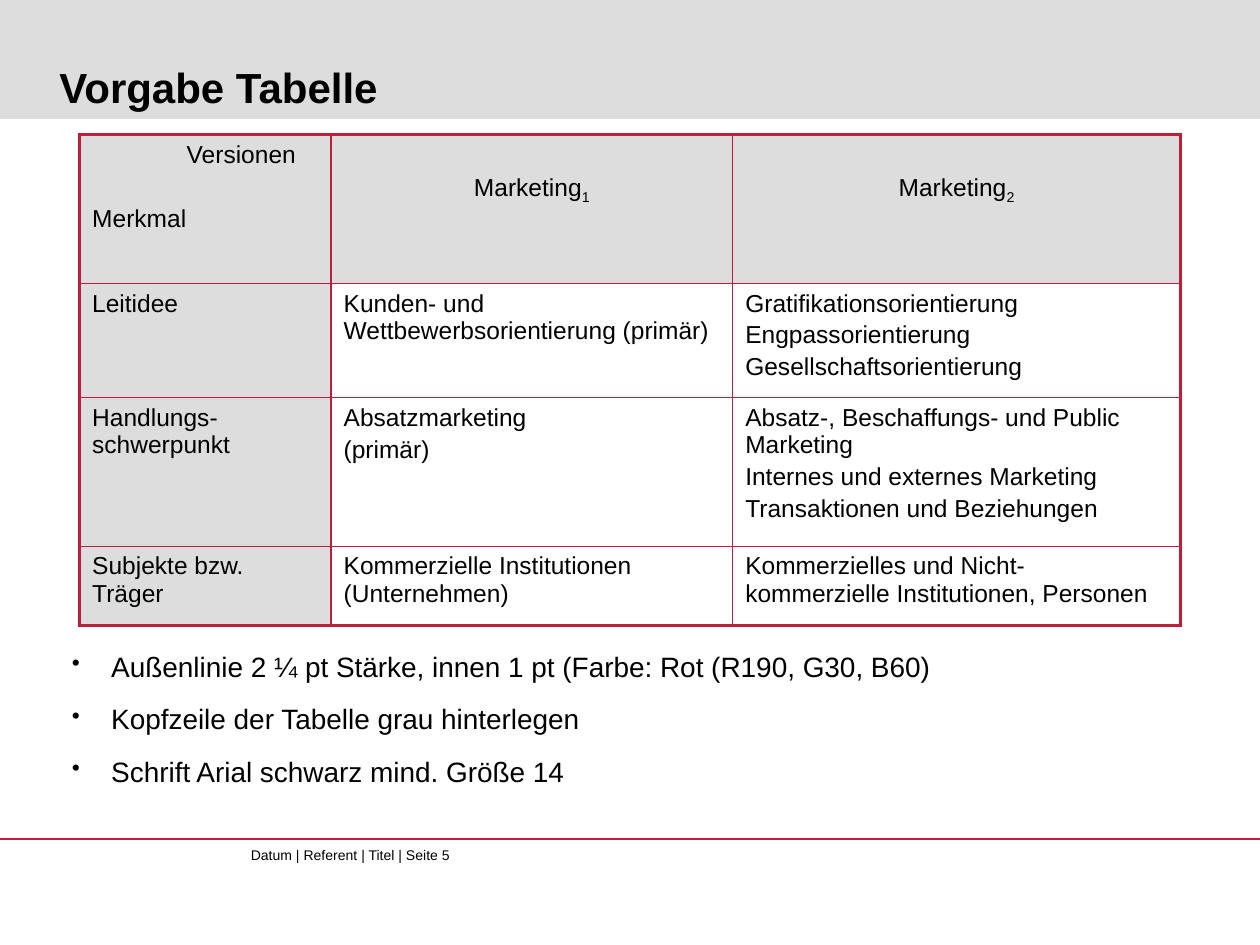
import pptx
import pptx.util
import pptx.dml.color
import pptx.enum.shapes
import pptx.enum.text
import pptx.oxml
import pptx.oxml.ns
from lxml import etree

Pt = pptx.util.Pt
ALIGN = pptx.enum.text.PP_ALIGN
COLORS = {"text": "000000", "grey": "DDDDDD", "red": "BE1E3C"}


def rgb(name):
    return pptx.dml.color.RGBColor.from_string(COLORS[name])


def write(frame, lines, size=14, bold=False, align=ALIGN.LEFT, gap=0,
          spacing=None, bullet=None, margins=None, anchor=None):
    """Fill a text frame; an underscore in a line starts a subscript."""
    frame.word_wrap = True
    if margins is not None:
        frame.margin_left = frame.margin_right = Pt(margins)
        frame.margin_top = frame.margin_bottom = Pt(margins)
    if anchor is not None:
        frame.vertical_anchor = anchor
    for i, line in enumerate(lines):
        paragraph = frame.add_paragraph() if i else frame.paragraphs[0]
        if bullet:
            pPr = paragraph._p.get_or_add_pPr()
            pPr.set("marL", str(Pt(22.5)))
            pPr.set("indent", str(Pt(-22.5)))
            etree.SubElement(pPr, pptx.oxml.ns.qn("a:buSzPct")).set("val", "85000")
            etree.SubElement(pPr, pptx.oxml.ns.qn("a:buChar")).set("char", bullet)
        paragraph.alignment = align
        if spacing:
            paragraph.line_spacing = spacing
        if i and gap:
            paragraph.space_before = Pt(gap)
        for j, part in enumerate(line.split("_")):
            run = paragraph.add_run()
            run.text = part
            run.font.name = "Arial"
            run.font.size = Pt(size)
            run.font.bold = bold
            run.font.color.rgb = rgb("text")
            if j:
                run._r.get_or_add_rPr().set("baseline", "-25000")


prs = pptx.Presentation()
prs.slide_width, prs.slide_height = Pt(720), Pt(540)
slide = prs.slides.add_slide(prs.slide_layouts[5])
shapes = slide.shapes

# Header band, behind the title
band = shapes.add_shape(pptx.enum.shapes.MSO_SHAPE.RECTANGLE, 0, 0, Pt(720), Pt(68))
band.shadow.inherit = False
band.fill.solid()
band.fill.fore_color.rgb = rgb("grey")
band.line.fill.background()
shapes._spTree.insert(2, band._element)

title = shapes.title
title.left, title.top, title.width, title.height = Pt(34), Pt(8.5), Pt(659.5), Pt(55.5)
write(title.text_frame, ["Vorgabe Tabelle"], size=24, bold=True, margins=0,
      anchor=pptx.enum.text.MSO_ANCHOR.BOTTOM)

# Footer
rule = shapes.add_connector(pptx.enum.shapes.MSO_CONNECTOR.STRAIGHT,
                            0, Pt(479.5), Pt(720), Pt(479.5))
rule.line.color.rgb = rgb("red")
rule.line.width = Pt(0.75)
etree.SubElement(rule._element.spPr, pptx.oxml.ns.qn("a:effectLst"))
footer = shapes.add_textbox(Pt(143.3), Pt(484), Pt(392.5), Pt(16.5))
write(footer.text_frame, ["Datum | Referent | Titel | Seite 5"], size=8, margins=0)

# Comparison table: one list of paragraphs per cell
rows = [
    [["Versionen", "Merkmal"], ["Marketing_1"], ["Marketing_2"]],
    [["Leitidee"],
     ["Kunden- und Wettbewerbsorientierung (primär)"],
     ["Gratifikationsorientierung", "Engpassorientierung", "Gesellschaftsorientierung"]],
    [["Handlungs- schwerpunkt"],
     ["Absatzmarketing", "(primär)"],
     ["Absatz-, Beschaffungs- und Public Marketing",
      "Internes und externes Marketing", "Transaktionen und Beziehungen"]],
    [["Subjekte bzw. Träger"],
     ["Kommerzielle Institutionen (Unternehmen)"],
     ["Kommerzielles und Nicht- kommerzielle Institutionen, Personen"]],
]
widths = [143.7, 229.5, 255.8]
heights = [85, 65.3, 85, 45.3]
table = shapes.add_table(len(rows), len(widths), Pt(45.5), Pt(77),
                         Pt(sum(widths)), Pt(sum(heights))).table
table.first_row = table.horz_banding = False
for column, width in zip(table.columns, widths):
    column.width = Pt(width)
for row, height in zip(table.rows, heights):
    row.height = Pt(height)

last_row, last_column = len(rows) - 1, len(widths) - 1
for r, row in enumerate(rows):
    for c, lines in enumerate(row):
        cell = table.cell(r, c)
        if r == 0 or c == 0:
            cell.fill.solid()
            cell.fill.fore_color.rgb = rgb("grey")
        else:
            cell.fill.background()
        heading = r == 0 and c > 0
        write(cell.text_frame, lines, gap=21 if r == 0 else 2.5,
              align=ALIGN.CENTER if heading else ALIGN.LEFT)
        if heading:
            cell.margin_top = Pt(22.5)
        # Thick outside, thin inside
        outer = {"lnL": c == 0, "lnR": c == last_column,
                 "lnT": r == 0, "lnB": r == last_row}
        for position, (side, thick) in enumerate(outer.items()):
            cell._tc.get_or_add_tcPr().insert(position, pptx.oxml.parse_xml(
                f'<a:{side} {pptx.oxml.ns.nsdecls("a")} w="{Pt(2.25 if thick else 1)}">'
                f'<a:solidFill><a:srgbClr val="{COLORS["red"]}"/></a:solidFill></a:{side}>'))
versions = table.cell(0, 0).text_frame.paragraphs[0]
versions._p.get_or_add_pPr().set("marL", str(Pt(54)))

# Formatting rules
rules = shapes.add_textbox(Pt(34), Pt(358), Pt(567.5), Pt(90.5))
write(rules.text_frame,
      ["Außenlinie 2 ¼ pt Stärke, innen 1 pt (Farbe: Rot (R190, G30, B60)",
       "Kopfzeile der Tabelle grau hinterlegen",
       "Schrift Arial schwarz mind. Größe 14"],
      size=16, spacing=1.5, gap=1.2, bullet="•")

prs.save("out.pptx")
